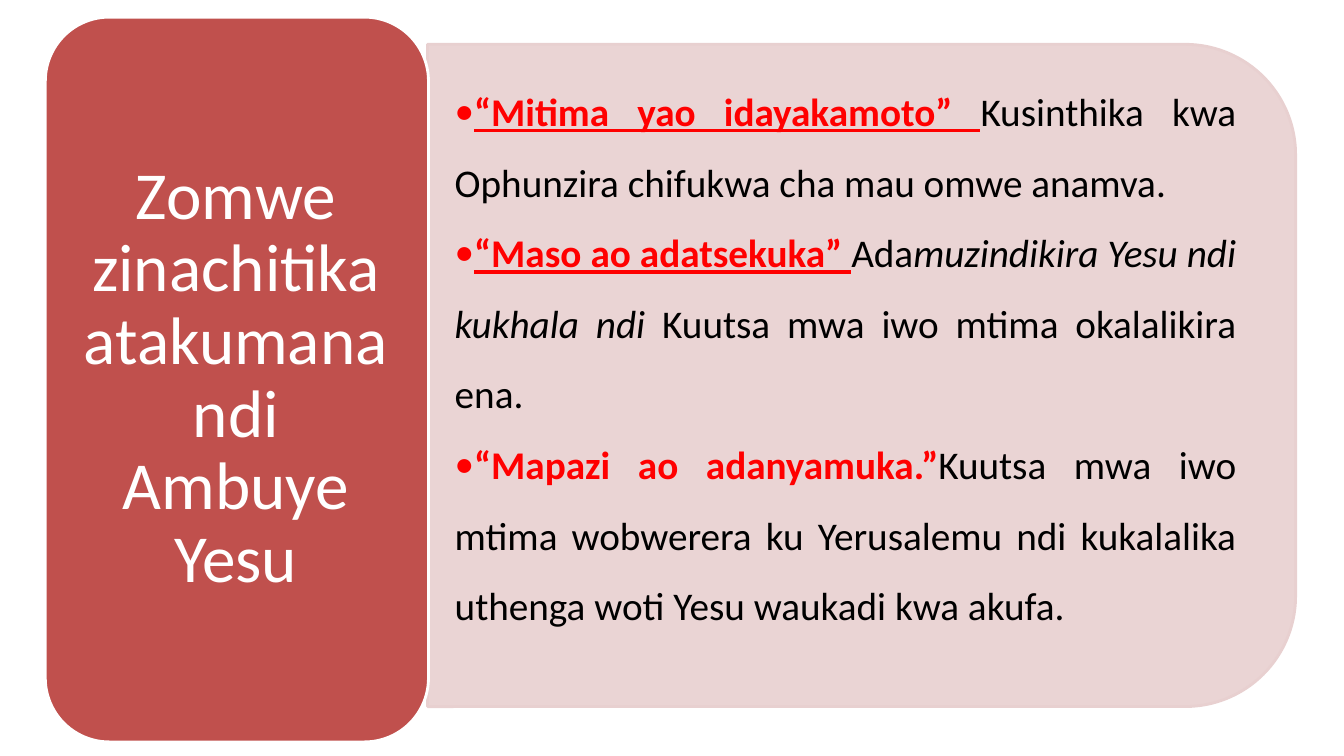
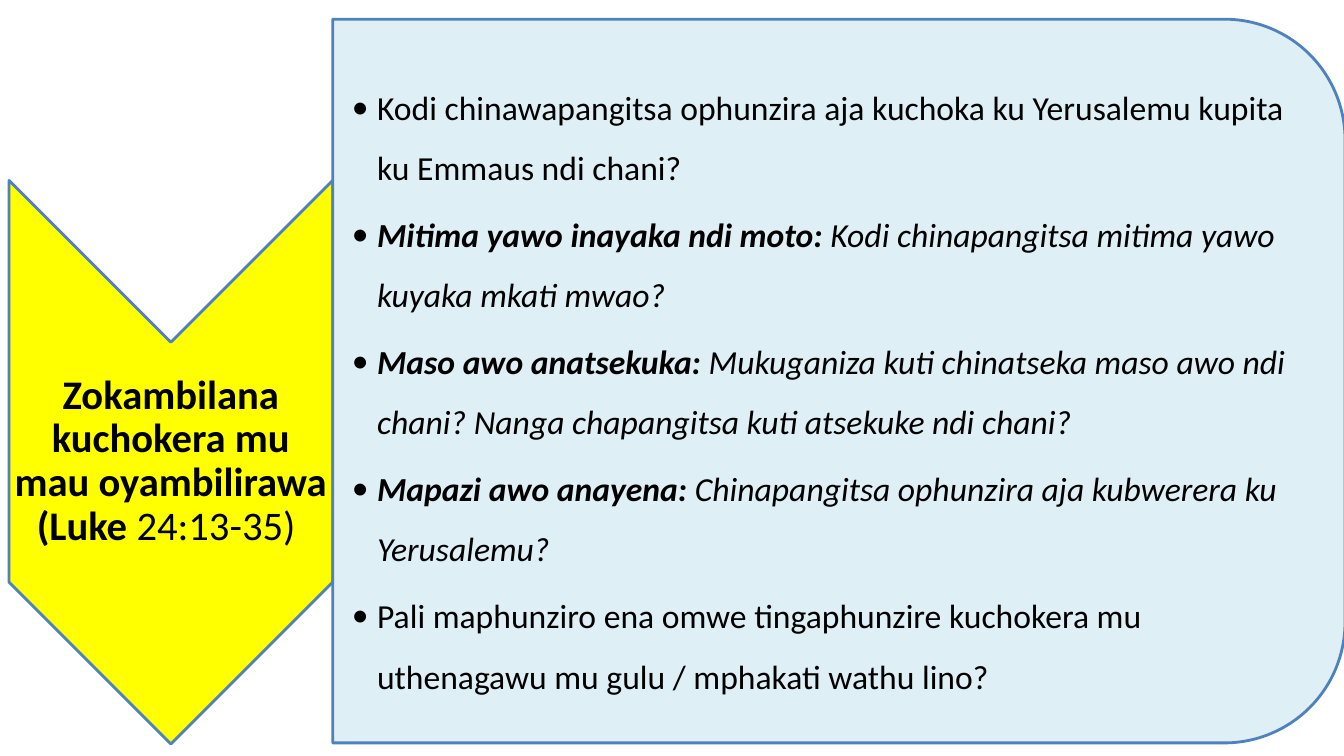
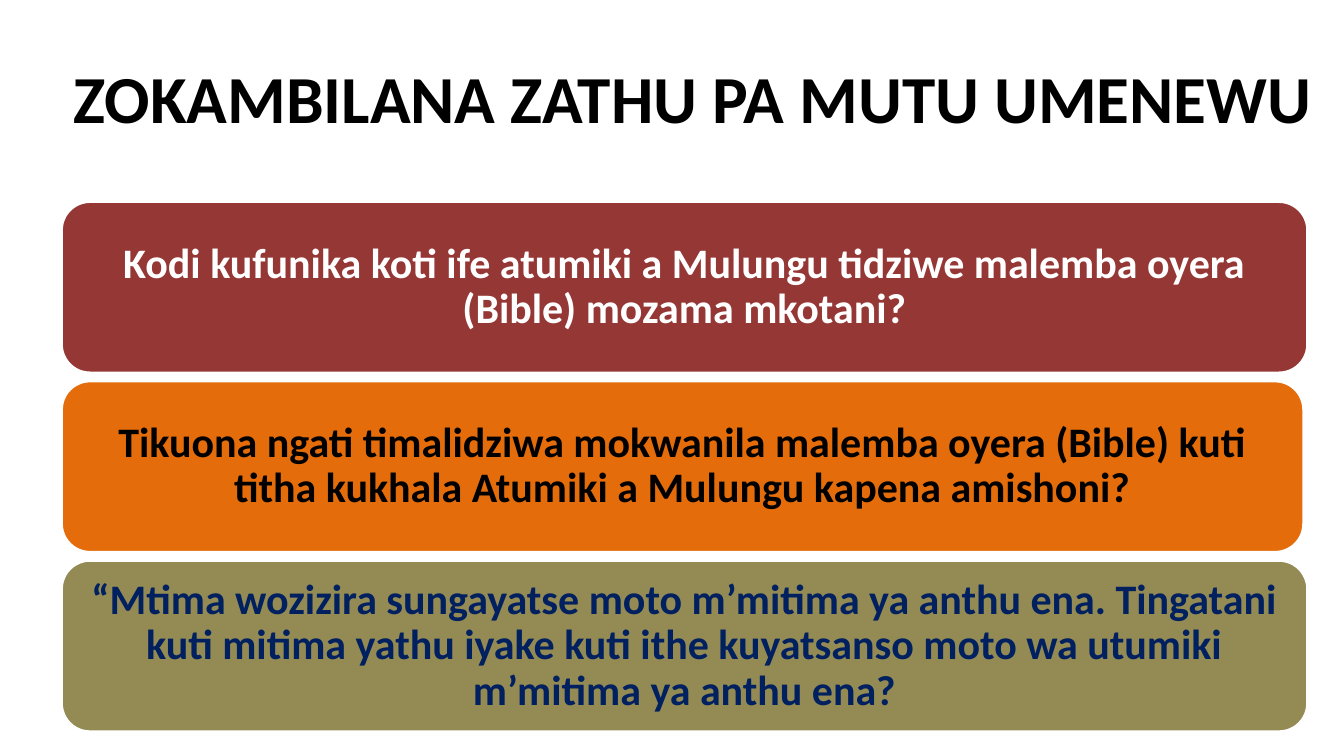
from collections import namedtuple

from lxml.etree import SubElement
from pptx import Presentation
from pptx.dml.color import RGBColor
from pptx.enum.shapes import MSO_SHAPE
from pptx.enum.text import MSO_ANCHOR, MSO_AUTO_SIZE, PP_ALIGN
from pptx.oxml.ns import qn
from pptx.util import Inches, Pt

FONT = "Calibri"
COLORS = {
    "white": "FFFFFF", "black": "000000", "red": "FF0000", "navy": "002060",
    "brick": "C0504D", "blush": "E8D0D0", "yellow": "FFFF00", "blue": "4F81BD",
    "sky": "DBEEF4", "maroon": "953735", "orange": "E46C0A", "olive": "948A54",
}
Box = namedtuple("Box", "left top width height")
Run = namedtuple("Run", "text style color", defaults=("", "black"))
LIST_LAYOUT, TITLE_LAYOUT = 1, 5

EVENTS = [
    [Run("“Mitima yao idayakamoto” ", "bu", "red"),
     Run("Kusinthika kwa Ophunzira chifukwa cha mau omwe anamva.")],
    [Run("“Maso ao adatsekuka” ", "bu", "red"),
     Run("Ada"),
     Run("muzindikira Yesu ndi kukhala ndi ", "i"),
     Run("Kuutsa mwa iwo mtima okalalikira ena.")],
    [Run("“Mapazi ao adanyamuka.”", "b", "red"),
     Run("Kuutsa mwa iwo mtima wobwerera ku Yerusalemu ndi kukalalika "
         "uthenga woti Yesu waukadi kwa akufa.")],
]
PASSAGE_QUESTIONS = [
    [Run("Kodi chinawapangitsa ophunzira aja kuchoka ku Yerusalemu kupita "
         "ku Emmaus ndi chani?")],
    [Run("Mitima yawo inayaka ndi moto: ", "bi"),
     Run("Kodi chinapangitsa mitima yawo kuyaka mkati mwao?", "i")],
    [Run("Maso awo anatsekuka: ", "bi"),
     Run("Mukuganiza kuti chinatseka maso awo ndi chani? Nanga chapangitsa "
         "kuti atsekuke ndi chani?", "i")],
    [Run("Mapazi awo anayena: ", "bi"),
     Run("Chinapangitsa ophunzira aja kubwerera ku Yerusalemu?", "i")],
    [Run("Pali maphunziro ena omwe tingaphunzire kuchokera mu uthenagawu "
         "mu gulu / mphakati wathu lino?")],
]
TOPIC_QUESTIONS = [
    ("Kodi kufunika koti ife atumiki a Mulungu tidziwe malemba oyera (Bible) "
     "mozama mkotani?", "maroon", "white", 12.36),
    ("Tikuona ngati timalidziwa mokwanila malemba oyera (Bible) kuti titha "
     "kukhala Atumiki a Mulungu kapena amishoni?", "orange", "black", 12.32),
    ("“Mtima wozizira sungayatse moto m’mitima ya anthu ena. Tingatani kuti "
     "mitima yathu iyake kuti ithe kuyatsanso moto wa utumiki m’mitima ya "
     "anthu ena?", "olive", "navy", 12.36),
]


def rgb(name):
    """Return a named palette colour."""
    return RGBColor.from_string(COLORS[name])


def inner(box, left, top, right, bottom):
    """Return the box shrunk by a margin on each side."""
    return Box(box.left + left, box.top + top,
               box.width - left - right, box.height - top - bottom)


def place(item, box):
    """Move and size an item to fill a box."""
    item.left, item.top, item.width, item.height = map(Inches, box)


def add_panel(slide, kind, box, fill, line, turned=False, opacity=None):
    """Add an outlined shape whose visible extent is the box."""
    left, top, width, height = box
    if turned:
        shift = (width - height) / 2
        left, top, width, height = left + shift, top - shift, height, width
    panel = slide.shapes.add_shape(kind, *map(Inches, (left, top, width, height)))
    panel.rotation = 90 if turned else 0
    panel.shadow.inherit = False
    panel.fill.solid()
    panel.fill.fore_color.rgb = rgb(fill)
    panel.line.color.rgb = rgb(line)
    panel.line.width = Pt(2)
    if opacity:
        color = panel.element.spPr.find(qn("a:solidFill")).find(qn("a:srgbClr"))
        SubElement(color, qn("a:alpha"), val=str(opacity * 1000))
    return panel


def set_frame(frame, insets):
    """Set wrapping, middle anchoring and insets of a text frame."""
    frame.auto_size = MSO_AUTO_SIZE.NONE
    frame.word_wrap = True
    frame.vertical_anchor = MSO_ANCHOR.MIDDLE
    (frame.margin_left, frame.margin_top,
     frame.margin_right, frame.margin_bottom) = map(Inches, insets)


def write(paragraph, runs, size, align, spacing):
    """Write formatted runs into a paragraph."""
    paragraph.alignment = align
    paragraph.line_spacing = spacing
    paragraph.space_before = Pt(0)
    for part in runs:
        run = paragraph.add_run()
        run.text = part.text
        font = run.font
        font.name, font.size = FONT, Pt(size)
        font.bold, font.italic = "b" in part.style, "i" in part.style
        font.underline = "u" in part.style
        font.color.rgb = rgb(part.color)


def write_heading(frame, runs, size, insets):
    """Write one centred, tightly spaced paragraph."""
    set_frame(frame, insets)
    write(frame.paragraphs[0], runs, size, PP_ALIGN.CENTER, 0.9)


def place_title(slide, box, runs, size, insets):
    """Place the title placeholder in front of the shapes added so far."""
    title = slide.shapes.title
    title.element.getparent().append(title.element)
    place(title, box)
    write_heading(title.text_frame, runs, size, insets)


def place_list(slide, box, items, size, insets, align, indent=0, gap=0):
    """Place the body placeholder as a bulleted list in front of its panel."""
    body = slide.placeholders[1]
    body.element.getparent().append(body.element)
    place(body, box)
    frame = body.text_frame
    set_frame(frame, insets)
    for index, runs in enumerate(items):
        paragraph = frame.add_paragraph() if index else frame.paragraphs[0]
        properties = paragraph._p.get_or_add_pPr()
        properties.set("marL", str(Inches(indent)))
        properties.set("indent", str(-Inches(indent)))
        SubElement(properties, qn("a:buFont"), typeface=FONT)
        SubElement(properties, qn("a:buChar"), char="•")
        write(paragraph, runs, size, align, 1.5)
        paragraph.space_after = Pt(gap)


def build_events(slide, panel, card):
    """Build the events slide from a list panel and a title card."""
    add_panel(slide, MSO_SHAPE.ROUND_2_SAME_RECTANGLE, panel, "blush", "blush",
              turned=True, opacity=90)
    place_list(slide, inner(panel, 0, 0.03, 0.32, 0.61), EVENTS, 28,
               (0.27, 0.14, 0.27, 0.14), PP_ALIGN.JUSTIFY)
    add_panel(slide, MSO_SHAPE.ROUNDED_RECTANGLE, card, "brick", "white")
    place_title(slide, inner(card, 0.18, 0.18, 0.2, 0.19),
                [Run("Zomwe zinachitika atakumana ndi Ambuye Yesu", color="white")],
                48, (0.2, 0.1, 0.2, 0.1))


def build_passage(slide, chevron, panel):
    """Build the passage slide from a title chevron and a question panel."""
    add_panel(slide, MSO_SHAPE.CHEVRON, chevron, "yellow", "blue", turned=True)
    place_title(slide, inner(chevron, 0, 1.6, 0, 1.61),
                [Run("Zokambilana kuchokera mu mau oyambilirawa (Luke ", "b"),
                 Run("24:13-35) ")], 29, (0.02,) * 4)
    add_panel(slide, MSO_SHAPE.ROUND_2_SAME_RECTANGLE, panel, "sky", "blue",
              turned=True, opacity=90)
    place_list(slide, inner(panel, 0, 0.35, 0.35, 0.35), PASSAGE_QUESTIONS, 24,
               (0.19, 0.02, 0.02, 0.02), PP_ALIGN.LEFT, indent=0.25, gap=4.4)


def build_topic(slide, heading, stack, gap):
    """Build the topic slide from a heading and a stack of question cards."""
    place_title(slide, heading, [Run("ZOKAMBILANA ZATHU PA MUTU UMENEWU", "b")],
                48, (0.12,) * 4)
    count = len(TOPIC_QUESTIONS)
    height = (stack.height - gap * (count - 1)) / count
    for row, (question, fill, color, width) in enumerate(TOPIC_QUESTIONS):
        box = Box(stack.left, stack.top + row * (height + gap), width, height)
        card = add_panel(slide, MSO_SHAPE.ROUNDED_RECTANGLE, box, fill, "white")
        write_heading(card.text_frame, [Run(question, "b", color)], 30,
                      (0.12, 0.06, 0.12, 0.06))


def main():
    """Build and save the presentation."""
    deck = Presentation()
    deck.slide_width, deck.slide_height = Inches(13.33), Inches(7.5)
    events, passage, topic = (
        deck.slides.add_slide(deck.slide_layouts[layout])
        for layout in (LIST_LAYOUT, LIST_LAYOUT, TITLE_LAYOUT))
    build_events(events, Box(4.24, 0.44, 8.61, 6.57), Box(0.45, 0.17, 3.8, 7.19))
    build_passage(passage, Box(0.09, 1.79, 3.21, 5.59), Box(3.3, 0.19, 10.04, 7.18))
    build_topic(topic, Box(0.42, 0.13, 12.91, 1.75), Box(0.61, 2, 12.36, 5.26), 0.08)
    deck.save("out.pptx")


if __name__ == "__main__":
    main()
